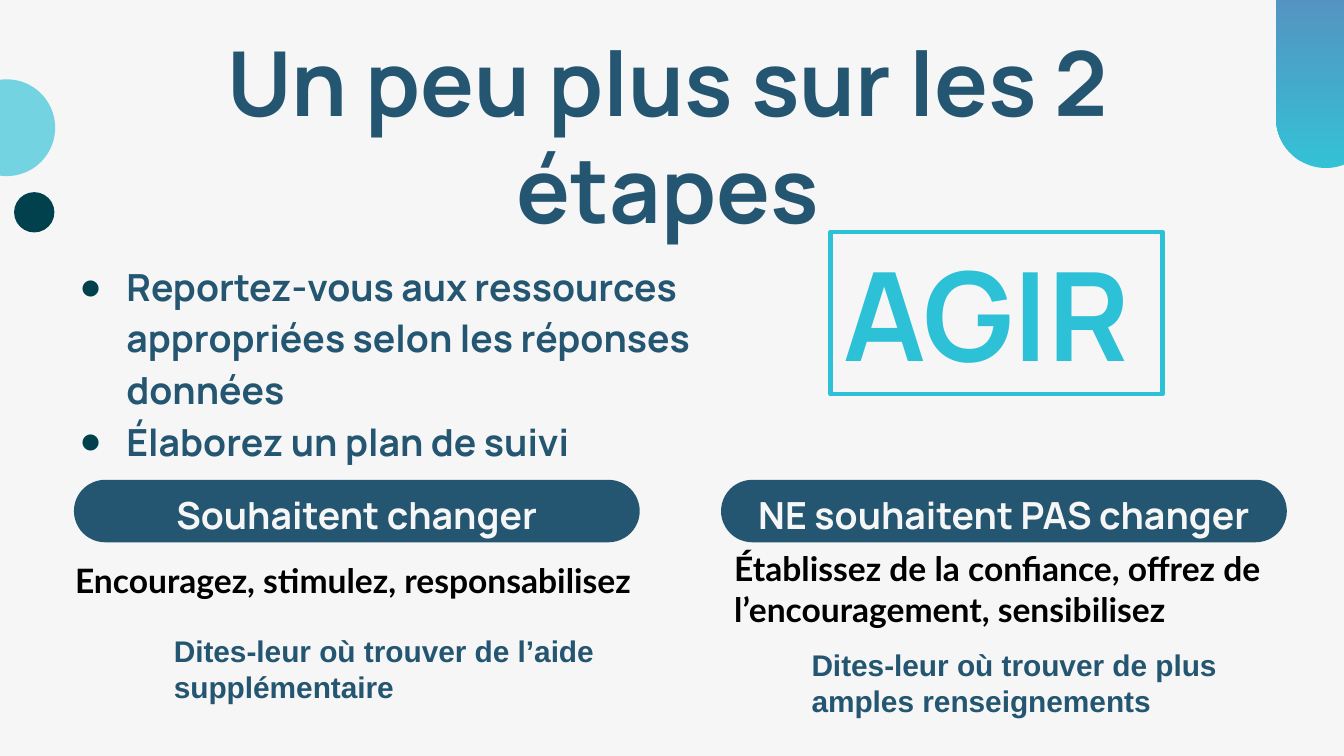
from dataclasses import dataclass
from typing import Optional

from lxml.etree import SubElement
from pptx import Presentation
from pptx.dml.color import RGBColor
from pptx.enum.shapes import MSO_SHAPE
from pptx.enum.text import MSO_ANCHOR, MSO_AUTO_SIZE, PP_ALIGN
from pptx.oxml import parse_xml
from pptx.oxml.ns import nsdecls, qn
from pptx.util import Pt

EMU_PER_PX = 4572
NAVY = "245671"
TEAL = "00414D"
CYAN = "2CC1D6"
PALE = "F6F6F6"
BLACK = "000000"
GRADIENT = [(0, "34C1D6"), (80, "5D87BC"), (100, "756DAF")]


@dataclass
class Box:
    left: int
    top: int
    width: int
    height: int

    def lengths(self) -> list[int]:
        return [px(value) for value in (self.left, self.top, self.width, self.height)]


@dataclass
class Circle:
    box: Box
    fill: str
    opacity: int = 100


@dataclass
class Note:
    box: Box
    text: str
    size: int
    font: str
    color: str
    wrap: bool = True


@dataclass
class Pill:
    box: Box
    text: str


CIRCLES = [
    Circle(Box(21, 286, 60, 60), TEAL),
    Circle(Box(-62, 118, 144, 144), "2DC1D6", 65),
]
PILLS = [
    Pill(Box(110, 714, 842, 93), "Souhaitent changer"),
    Pill(Box(1073, 714, 842, 93), "NE souhaitent PAS changer"),
]
NOTES = [
    Note(Box(92, 824, 878, 80), "Encouragez, stimulez, responsabilisez", 18, "Lato", BLACK, False),
    Note(Box(1073, 806, 926, 142),
         "Établissez de la confiance, offrez de l’encouragement, sensibilisez", 18, "Lato", BLACK),
    Note(Box(1188, 953, 794, 128),
         "Dites-leur où trouver de plus amples renseignements", 16, "Arial", NAVY),
    Note(Box(239, 932, 722, 128),
         "Dites-leur où trouver de l’aide supplémentaire", 16, "Arial", NAVY),
]
STEPS = [
    "Reportez-vous aux ressources appropriées selon les réponses données",
    "Élaborez un plan de suivi",
]


def px(value: int) -> int:
    return value * EMU_PER_PX


def rgb(color: str) -> RGBColor:
    return RGBColor.from_string(color)


def place(shape, box: Box) -> None:
    shape.left, shape.top, shape.width, shape.height = box.lengths()


def write(shape, *texts: str, size: int, color: str, font: str = "Manrope",
          align=PP_ALIGN.LEFT, anchor=MSO_ANCHOR.TOP, spacing: float = 1.0,
          wrap: bool = True, inset: Optional[int] = None) -> None:
    frame = shape.text_frame
    frame.auto_size = MSO_AUTO_SIZE.NONE
    frame.word_wrap = wrap
    frame.vertical_anchor = anchor
    if inset is not None:
        frame.margin_left = frame.margin_right = px(inset)
        frame.margin_top = frame.margin_bottom = px(inset)
    for index, text in enumerate(texts):
        paragraph = frame.add_paragraph() if index else frame.paragraphs[0]
        paragraph.alignment = align
        paragraph.line_spacing = spacing
        paragraph.space_before = Pt(0)
        run = paragraph.add_run()
        run.text = text
        run.font.size = Pt(size)
        run.font.name = font
        run.font.bold = True
        run.font.color.rgb = rgb(color)


def add_plain_shape(slide, kind, box: Box, fill: Optional[str] = None):
    shape = slide.shapes.add_shape(kind, *box.lengths())
    shape.shadow.inherit = False
    shape.line.fill.background()
    if fill:
        shape.fill.solid()
        shape.fill.fore_color.rgb = rgb(fill)
    else:
        shape.fill.background()
    return shape


def add_circle(slide, circle: Circle) -> None:
    shape = add_plain_shape(slide, MSO_SHAPE.OVAL, circle.box, circle.fill)
    if circle.opacity < 100:
        color = shape.fill._xPr.find(qn("a:solidFill"))[0]
        SubElement(color, qn("a:alpha"), val=str(circle.opacity * 1000))


def add_gradient_tab(slide, box: Box) -> None:
    shape = add_plain_shape(slide, MSO_SHAPE.ROUNDED_RECTANGLE, box)
    shape.adjustments[0] = 0.5
    shape.rotation = 180
    stops = "".join(
        f'<a:gs pos="{position * 1000}"><a:srgbClr val="{color}"/></a:gs>'
        for position, color in GRADIENT
    )
    gradient = parse_xml(
        f'<a:gradFill {nsdecls("a")} rotWithShape="1"><a:gsLst>{stops}</a:gsLst>'
        '<a:lin ang="5400000" scaled="0"/></a:gradFill>'
    )
    properties = shape.fill._xPr
    properties.replace(properties.find(qn("a:noFill")), gradient)


def add_pill(slide, pill: Pill) -> None:
    shape = add_plain_shape(slide, MSO_SHAPE.ROUNDED_RECTANGLE, pill.box, NAVY)
    shape.adjustments[0] = 0.5
    write(shape, pill.text, size=20, color=PALE, align=PP_ALIGN.CENTER,
          anchor=MSO_ANCHOR.MIDDLE, spacing=1.15, inset=20)


def add_note(slide, note: Note) -> None:
    shape = slide.shapes.add_textbox(*note.box.lengths())
    write(shape, note.text, size=note.size, color=note.color, font=note.font, wrap=note.wrap)


def add_bullet(paragraph) -> None:
    properties = paragraph._p.get_or_add_pPr()
    properties.set("marL", str(px(100)))
    properties.set("indent", str(px(-70)))
    color = SubElement(properties, qn("a:buClr"))
    SubElement(color, qn("a:srgbClr"), val=TEAL)
    SubElement(properties, qn("a:buChar"), char="●")


def main() -> None:
    presentation = Presentation()
    presentation.slide_width, presentation.slide_height = px(2000), px(1125)
    slide = presentation.slides.add_slide(presentation.slide_layouts[1])
    slide.background.fill.solid()
    slide.background.fill.fore_color.rgb = rgb(PALE)

    for circle in CIRCLES:
        add_circle(slide, circle)
    add_gradient_tab(slide, Box(1899, -150, 148, 400))

    title, body = slide.placeholders
    place(title, Box(130, 20, 1728, 216))
    write(title, "Un peu plus sur les 2 étapes", size=48, color=NAVY,
          align=PP_ALIGN.CENTER, inset=20)
    place(body, Box(68, 363, 1106, 652))
    write(body, *STEPS, size=20, color=NAVY, spacing=1.15, inset=20)
    for paragraph in body.text_frame.paragraphs:
        add_bullet(paragraph)

    for pill in PILLS:
        add_pill(slide, pill)
    for note in NOTES:
        add_note(slide, note)

    frame = add_plain_shape(slide, MSO_SHAPE.RECTANGLE, Box(1236, 345, 494, 242))
    frame.line.color.rgb = rgb(CYAN)
    frame.line.width = Pt(2.25)
    write(frame, "AGIR", size=66, color=CYAN, wrap=False)

    presentation.save("out.pptx")


if __name__ == "__main__":
    main()
